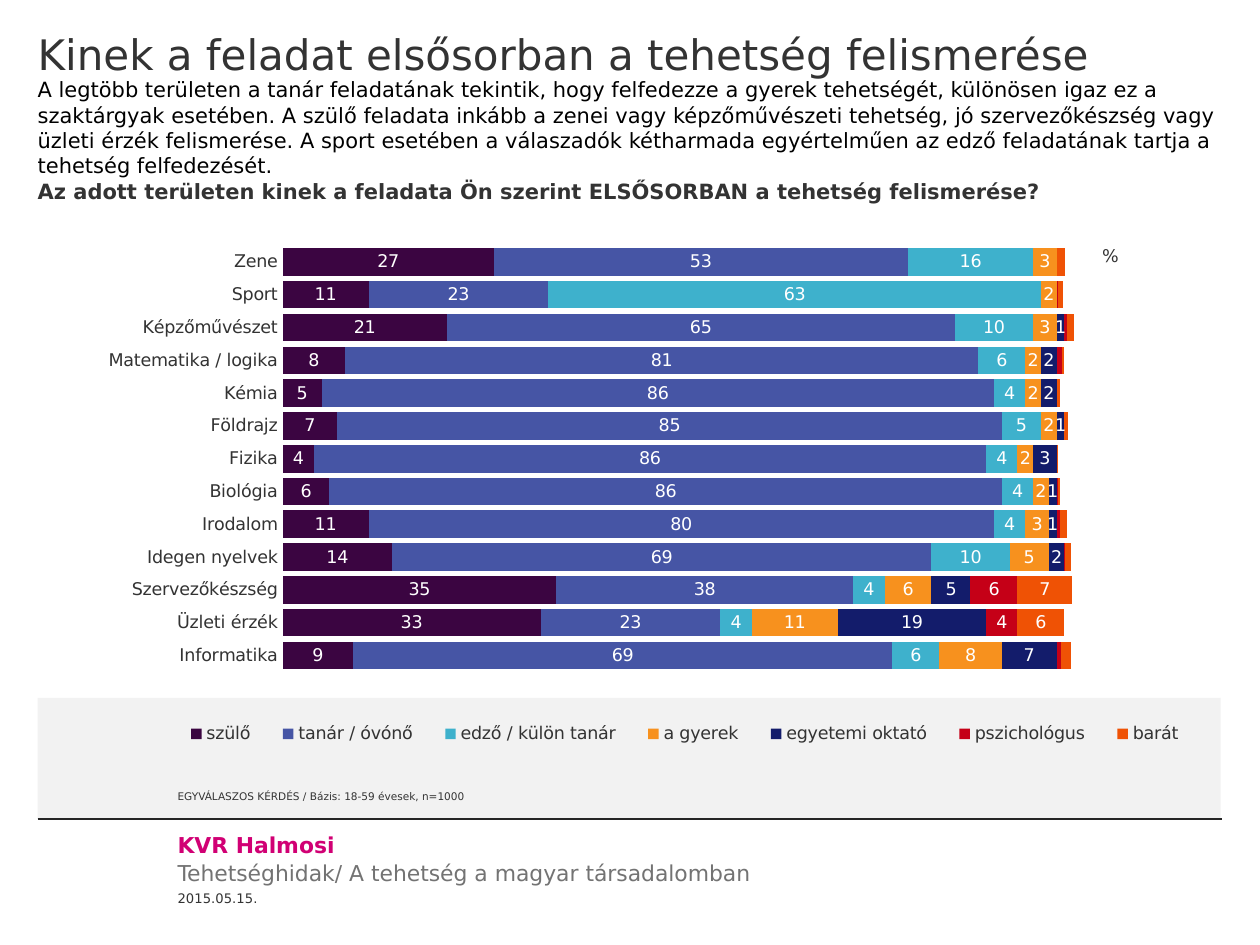
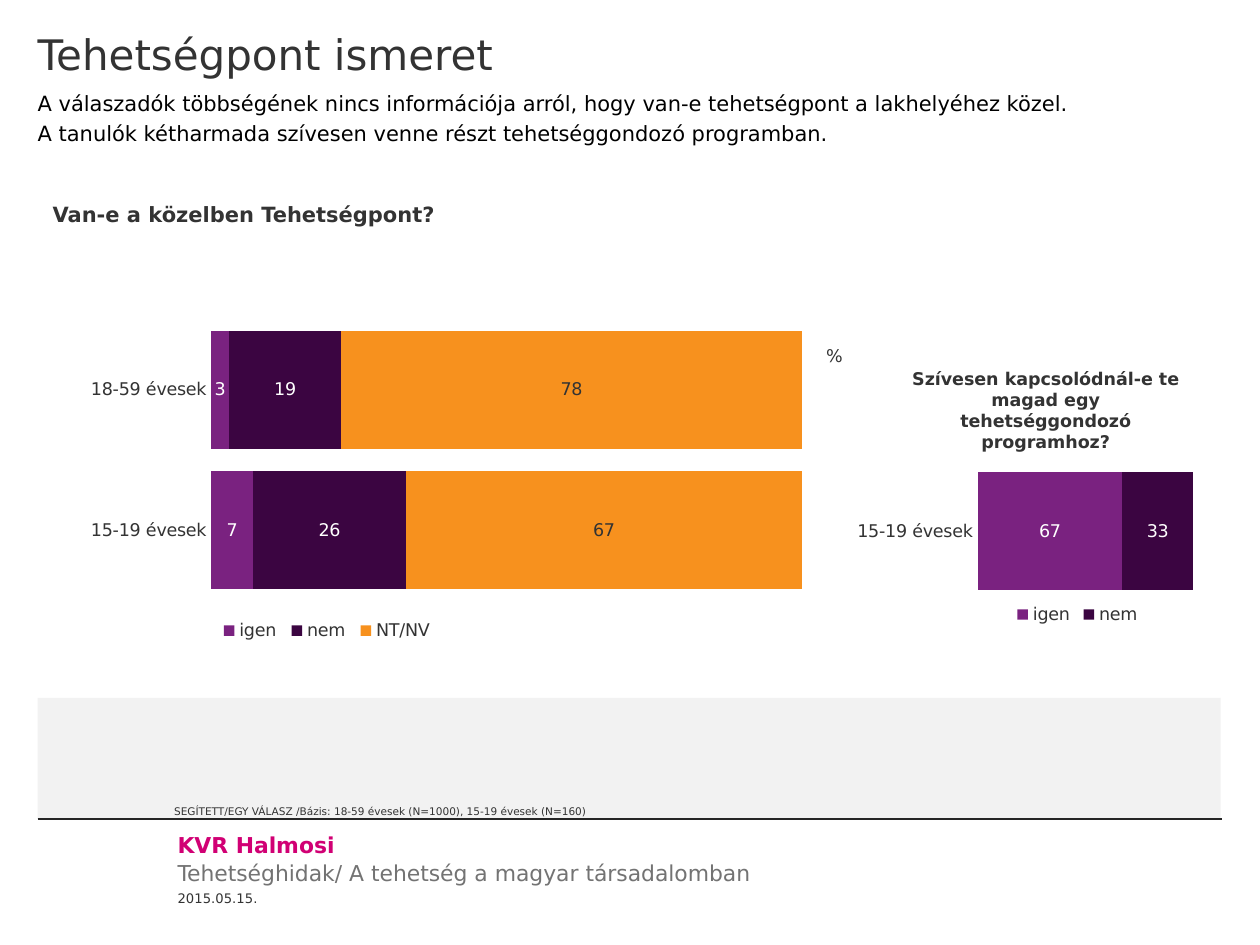
"""Builds two survey slides on recognising talent and on knowing the talent points."""
from dataclasses import dataclass, replace
from typing import NamedTuple, Optional

from lxml import etree
from pptx import Presentation
from pptx import util as u
from pptx.chart import data
from pptx.dml import color
from pptx.enum import chart as charts
from pptx.enum import shapes, text
from pptx.oxml import ns

FONT = "DejaVu Sans"
INK, BLACK, WHITE = "333333", "000000", "FFFFFF"
GREY, PINK, BAND, RULE = "737373", "D10074", "F2F2F2", "262626"
PLUM, VIOLET, ORANGE = "3B0541", "7A2280", "F7911E"
BLUE, CYAN, NAVY, RED, FLAME = "4655A5", "3EB1CC", "131C6B", "C50017", "EF5205"
AXIS_MAX = 120
CHART_SIZE = u.Pt(10)


class Area(NamedTuple):
    """Left, top, width and height in centimetres."""
    left: float
    top: float
    width: float
    height: float

    def lengths(self) -> list:
        """Return the four values as lengths."""
        return [u.Cm(value) for value in self]


class Inset(NamedTuple):
    """Left, top, right and bottom margins in centimetres."""
    left: float = 0
    top: float = 0
    right: float = 0
    bottom: float = 0


@dataclass(frozen=True)
class Block:
    """A piece of text with its place and look."""
    lines: tuple
    area: Area
    inset: Inset = Inset()
    size: float = 12
    color: str = INK
    bold: bool = False
    anchor: text.MSO_ANCHOR = text.MSO_ANCHOR.TOP
    align: text.PP_ALIGN = text.PP_ALIGN.LEFT


class Bars(NamedTuple):
    """One series; labelled lists the labelled points, None means all."""
    name: str
    color: str
    values: tuple
    label_color: str = WHITE
    labelled: Optional[tuple] = None


@dataclass(frozen=True)
class BarChart:
    """A stacked bar chart with the placing of its parts as fractions."""
    area: Area
    categories: tuple
    series: tuple
    plot: tuple
    legend: tuple
    percent: Optional[tuple] = None


HEADING = Inset(0.76, 0.58, 0.76)
SUMMARY = Inset(0.76, 0.13, 0.76, 0.13)
FOOTER = Inset(1.4, 0.25, 0.25, 0.13)

TITLE = Block((), Area(0, 0, 25.4, 2.87), HEADING, 24)
QUESTION = Block((), Area(0, 3.02, 24.64, 2.11), HEADING, bold=True)
NOTE = Block((), Area(3.58, 15.47, 21.06, 1.02), Inset(bottom=0.3), 6,
             anchor=text.MSO_ANCHOR.BOTTOM)

FOOTERS = (
    Block(("Tehetséghidak/ A tehetség a magyar társadalomban",),
          Area(2.18, 17.07, 13.59, 1.04), FOOTER, 12.5, GREY),
    Block(("2015.05.15.",), Area(3.58, 18.03, 2.79, 0.23), size=7.5,
          anchor=text.MSO_ANCHOR.BOTTOM),
    Block(("KVR Halmosi",), Area(2.18, 16.51, 13.59, 1.04), FOOTER, 12.5, PINK, True),
)

FIELDS_CHART = BarChart(
    Area(0.76, 3.58, 23.85, 12.93),
    ("Zene", "Sport", "Képzőművészet", "Matematika / logika", "Kémia", "Földrajz",
     "Fizika", "Biológia", "Irodalom", "Idegen nyelvek", "Szervezőkészség",
     "Üzleti érzék", "Informatika"),
    (
        Bars("szülő", PLUM, (27, 11, 21, 8, 5, 7, 4, 6, 11, 14, 35, 33, 9)),
        Bars("tanár / óvónő", BLUE, (53, 23, 65, 81, 86, 85, 86, 86, 80, 69, 38, 23, 69)),
        Bars("edző / külön tanár", CYAN, (16, 63, 10, 6, 4, 5, 4, 4, 4, 10, 4, 4, 6)),
        Bars("a gyerek", ORANGE, (3, 2, 3, 2, 2, 2, 2, 2, 3, 5, 6, 11, 8)),
        Bars("egyetemi oktató", NAVY, (0, 0, 1, 2, 2, 1, 3, 1, 1, 2, 5, 19, 7),
             labelled=tuple(range(2, 13))),
        Bars("pszichológus", RED,
             (None, 0.2, 0.4, 0.7, None, None, 0.1, 0.2, 0.5, 0.1, 6, 4, 0.6),
             labelled=(10, 11)),
        Bars("barát", FLAME,
             (1.1, 0.6, 0.9, 0.3, 0.4, 0.5, 0.1, 0.3, 0.9, 0.8, 7, 6, 1.2),
             labelled=(10, 11)),
    ),
    plot=(0.207, 0.106, 0.793, 0.665),
    legend=(0.107, 0.83, 0.88, 0.075),
    percent=(0.897, 0.1),
)

NEARBY_CHART = BarChart(
    Area(0.76, 6.2, 18.92, 7.85),
    ("18-59 évesek", "15-19 évesek"),
    (Bars("igen", VIOLET, (3, 7)), Bars("nem", PLUM, (19, 26)),
     Bars("NT/NV", ORANGE, (78, 67), INK)),
    plot=(0.185, 0.032, 0.755, 0.72),
    legend=(0.188, 0.78, 0.24, 0.1),
)

JOINING_CHART = BarChart(
    Area(16.51, 3.48, 9.14, 9.58),
    ("", "", "15-19 évesek"),
    (Bars("igen", VIOLET, (None, None, 67)), Bars("nem", PLUM, (None, None, 33))),
    plot=(0.35, 0.017, 0.571, 0.885),
    legend=(0.42, 0.895, 0.3, 0.07),
    percent=(0.009, 0.355),
)


def rgb(code: str) -> color.RGBColor:
    """Turn a hex string into a colour."""
    return color.RGBColor.from_string(code)


def style_font(font, size, code: str, bold: bool = False) -> None:
    """Set typeface, size, colour and weight."""
    font.name, font.size, font.bold = FONT, size, bold
    font.color.rgb = rgb(code)


def write(shape, block: Block, plain_list: bool = False) -> None:
    """Place a shape and fill it with the block's text."""
    shape.left, shape.top, shape.width, shape.height = block.area.lengths()
    frame = shape.text_frame
    frame.word_wrap, frame.auto_size = True, text.MSO_AUTO_SIZE.NONE
    frame.vertical_anchor = block.anchor
    (frame.margin_left, frame.margin_top,
     frame.margin_right, frame.margin_bottom) = map(u.Cm, block.inset)
    for number, line in enumerate(block.lines):
        para = frame.add_paragraph() if number else frame.paragraphs[0]
        para.text = line
        if plain_list:
            properties = para._p.get_or_add_pPr()
            properties.set("marL", "0")
            properties.set("indent", "0")
            etree.SubElement(properties, ns.qn("a:buNone"))
        para.alignment = block.align
        para.space_before = u.Pt(block.size * 0.2 if number else 0)
        style_font(para.font, u.Pt(block.size), block.color, block.bold)


def add_text(page, block: Block) -> None:
    """Add a text box."""
    write(page.shapes.add_textbox(*block.area.lengths()), block)


def fill_placeholder(page, index: int, block: Block) -> None:
    """Bring a placeholder to the front and fill it."""
    holder = page.placeholders[index]
    holder.element.getparent().append(holder.element)
    write(holder, block, plain_list=index > 0)


def add_frame(page) -> None:
    """Draw the band, rule and footer texts shared by the slides."""
    band = page.shapes.add_shape(shapes.MSO_SHAPE.RECTANGLE,
                                 *Area(0.76, 14.07, 23.85, 2.44).lengths())
    band.shadow.inherit = False
    band.fill.solid()
    band.fill.fore_color.rgb = rgb(BAND)
    band.line.fill.background()
    rule = page.shapes.add_connector(shapes.MSO_CONNECTOR.STRAIGHT, u.Cm(0.76),
                                     u.Cm(16.51), u.Cm(24.64), u.Cm(16.51))
    rule.line.color.rgb, rule.line.width = rgb(RULE), u.Pt(0.75)
    etree.SubElement(rule.element.spPr, ns.qn("a:effectLst"))
    for block in FOOTERS:
        add_text(page, block)


def set_layout(part, fractions: tuple, inner: bool = False) -> None:
    """Give a chart part a fixed place, as fractions of the chart."""
    for old in part.findall(ns.qn("c:layout")):
        part.remove(old)
    layout = etree.Element(ns.qn("c:layout"))
    manual = etree.SubElement(layout, ns.qn("c:manualLayout"))
    settings = [("layoutTarget", "inner")] if inner else []
    settings += [("xMode", "edge"), ("yMode", "edge")]
    settings += zip("xywh", map(str, fractions))
    for name, value in settings:
        etree.SubElement(manual, ns.qn(f"c:{name}")).set("val", value)
    leading = (ns.qn("c:tx"), ns.qn("c:legendPos"))
    part.insert(sum(child.tag in leading for child in part), layout)


def style_series(series, bars: Bars) -> None:
    """Colour one series and label its points."""
    series.format.fill.solid()
    series.format.fill.fore_color.rgb = rgb(bars.color)
    labels = series.data_labels
    labels.number_format, labels.number_format_is_linked = "#,##0", False
    labels.show_value = bars.labelled is None
    style_font(labels.font, CHART_SIZE, bars.label_color)
    for index in bars.labelled or ():
        style_font(series.points[index].data_label.font, CHART_SIZE, bars.label_color)


def add_bar_chart(page, design: BarChart) -> None:
    """Add a stacked bar chart without visible axes."""
    table = data.CategoryChartData()
    table.categories = design.categories
    for bars in design.series:
        table.add_series(bars.name, bars.values)
    chart = page.shapes.add_chart(charts.XL_CHART_TYPE.BAR_STACKED,
                                  *design.area.lengths(), table).chart
    style_font(chart.font, CHART_SIZE, INK)
    plot = chart.plots[0]
    plot.gap_width, plot.overlap, plot.vary_by_categories = 19, 100, False
    for series, bars in zip(plot.series, design.series):
        style_series(series, bars)

    for axis in (chart.category_axis, chart.value_axis):
        axis.major_tick_mark = axis.minor_tick_mark = charts.XL_TICK_MARK.NONE
        axis.has_major_gridlines = False
        axis.format.line.fill.background()
    chart.category_axis.reverse_order = True
    chart.value_axis.tick_label_position = charts.XL_TICK_LABEL_POSITION.NONE
    chart.value_axis.minimum_scale, chart.value_axis.maximum_scale = 0, AXIS_MAX

    chart.has_legend = True
    chart.legend.position = charts.XL_LEGEND_POSITION.BOTTOM
    chart.legend.include_in_layout = False
    set_layout(chart.legend._element, design.legend)
    set_layout(chart._chartSpace.chart.plotArea, design.plot, inner=True)
    chart.has_title = design.percent is not None
    if design.percent:
        para = chart.chart_title.text_frame.paragraphs[0]
        para.text = "%"
        style_font(para.font, CHART_SIZE, INK)
        set_layout(chart.chart_title._element, design.percent)


def add_page(deck, title: str, question: Block, note: Block, *designs: BarChart):
    """Add a slide with the shared frame, charts, title, question and note."""
    page = deck.slides.add_slide(deck.slide_layouts[3])
    add_frame(page)
    for design in designs:
        add_bar_chart(page, design)
    for index, block in enumerate((replace(TITLE, lines=(title,)), question, note)):
        fill_placeholder(page, index, block)
    return page


def main() -> None:
    """Build and save the deck."""
    deck = Presentation()
    deck.slide_width, deck.slide_height = u.Cm(25.4), u.Cm(19.05)

    page = add_page(
        deck, "Kinek a feladat elsősorban a tehetség felismerése",
        replace(QUESTION, lines=("Az adott területen kinek a feladata Ön szerint "
                                 "ELSŐSORBAN a tehetség felismerése?",)),
        replace(NOTE, lines=("EGYVÁLASZOS KÉRDÉS / Bázis: 18-59 évesek, n=1000",)),
        FIELDS_CHART)
    add_text(page, Block((
        "A legtöbb területen a tanár feladatának tekintik, hogy felfedezze a gyerek "
        "tehetségét, különösen igaz ez a szaktárgyak esetében. A szülő feladata inkább "
        "a zenei vagy képzőművészeti tehetség, jó szervezőkészség vagy üzleti érzék "
        "felismerése. A sport esetében a válaszadók kétharmada egyértelműen az edző "
        "feladatának tartja a tehetség felfedezését.",),
        Area(0, 1.42, 25.4, 2.31), SUMMARY, color=BLACK))

    page = add_page(
        deck, "Tehetségpont ismeret",
        replace(QUESTION, lines=("Van-e a közelben Tehetségpont?",),
                area=Area(0.3, 3.48, 24.64, 2.11)),
        replace(NOTE, lines=("SEGÍTETT/EGY VÁLASZ /Bázis: 18-59 évesek (N=1000), "
                             "15-19 évesek (N=160)",),
                area=Area(3.51, 15.76, 21.06, 1.02)),
        NEARBY_CHART, JOINING_CHART)
    add_text(page, Block((
        "Szívesen kapcsolódnál-e te magad egy tehetséggondozó programhoz?",),
        Area(17.45, 6.83, 7.26, 2.11), HEADING, 10, bold=True,
        align=text.PP_ALIGN.CENTER))
    add_text(page, Block((
        "A válaszadók többségének nincs információja arról, hogy van-e tehetségpont "
        "a lakhelyéhez közel.",
        "A tanulók kétharmada szívesen venne részt tehetséggondozó programban."),
        Area(0, 1.7, 22.5, 1.4), SUMMARY, color=BLACK))

    deck.save("out.pptx")


if __name__ == "__main__":
    main()
